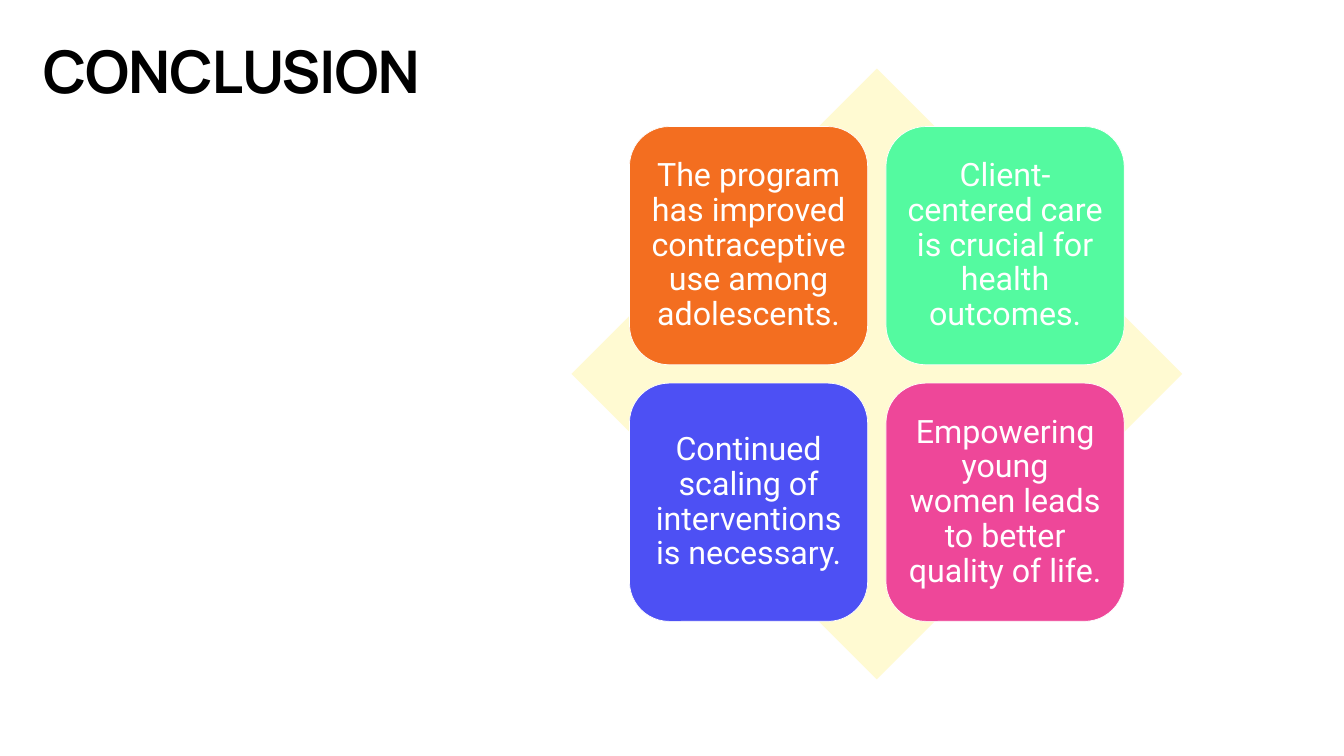
import pptx
import pptx.util
import pptx.dml.color
import pptx.enum.shapes
import pptx.enum.text

Inches, Pt = pptx.util.Inches, pptx.util.Pt
RGB = pptx.dml.color.RGBColor.from_string
SHAPE = pptx.enum.shapes.MSO_SHAPE
ALIGN = pptx.enum.text.PP_ALIGN
MIDDLE = pptx.enum.text.MSO_ANCHOR.MIDDLE

THEME = {
    "diamond": "FFFAD2",
    "outline": "FFFFFF",
    "heading": {"name": "Manrope", "size": Pt(84), "bold": True, "color": "000000"},
    "body": {"name": "Roboto", "size": Pt(46), "bold": False, "color": "FFFFFF"},
}

CONCLUSIONS = [
    ("The program has improved contraceptive use among adolescents.", "F36E20"),
    ("Client-centered care is crucial for health outcomes.", "54FAA0"),
    ("Continued scaling of interventions is necessary.", "4D50F4"),
    ("Empowering young women leads to better quality of life.", "EE4799"),
]


def write(frame, text, style, frame_format, paragraph_format):
    frame.text = text
    paragraph = frame.paragraphs[0]
    font = paragraph.runs[0].font
    for target, values in ((frame, frame_format), (paragraph, paragraph_format), (font, style)):
        for attribute, value in values.items():
            if attribute == "color":
                font.color.rgb = RGB(value)
            else:
                setattr(target, attribute, value)
    return paragraph.runs[0]


def add_filled(slide, preset, left, top, side, color):
    shape = slide.shapes.add_shape(preset, Inches(left), Inches(top), Inches(side), Inches(side))
    shape.shadow.inherit = False
    shape.fill.solid()
    shape.fill.fore_color.rgb = RGB(color)
    shape.line.fill.background()
    return shape


deck = pptx.Presentation()
deck.slide_width, deck.slide_height = Inches(26.67), Inches(15)
slide = deck.slides.add_slide(deck.slide_layouts[5])

# Heading
heading = slide.shapes.title
heading_box = {"left": 0.75, "top": 0.58, "width": 9.67, "height": 1.91}
for side, length in heading_box.items():
    setattr(heading, side, Inches(length))
heading_frame = {
    "margin_left": Inches(0.1), "margin_right": Inches(0.1),
    "margin_top": Inches(0.1), "margin_bottom": Inches(0.05),
    "vertical_anchor": MIDDLE, "word_wrap": True,
    "auto_size": pptx.enum.text.MSO_AUTO_SIZE.NONE,
}
heading_run = write(heading.text_frame, "CONCLUSION", THEME["heading"], heading_frame,
                    {"alignment": ALIGN.LEFT, "line_spacing": 0.7})
heading_run.font._element.set("spc", "-150")

# Diamond behind a two-by-two matrix, whose grid is a share of the diamond
diamond_left, diamond_top, diamond_side = 11.34, 1.36, 12.12
add_filled(slide, SHAPE.DIAMOND, diamond_left, diamond_top, diamond_side, THEME["diamond"])

tile_side = 0.39 * diamond_side
tile_pitch = 0.42 * diamond_side
tile_inset = (diamond_side - tile_pitch - tile_side) / 2
tile_frame = {f"margin_{side}": Inches(0.19) for side in ("left", "right", "top", "bottom")}
tile_frame |= {"vertical_anchor": MIDDLE, "word_wrap": True}

for index, (conclusion, color) in enumerate(CONCLUSIONS):
    row, column = divmod(index, 2)
    tile = add_filled(slide, SHAPE.ROUNDED_RECTANGLE,
                      diamond_left + tile_inset + column * tile_pitch,
                      diamond_top + tile_inset + row * tile_pitch, tile_side, color)
    tile.line.color.rgb = RGB(THEME["outline"])
    tile.line.width = Pt(1)
    write(tile.text_frame, conclusion, THEME["body"], tile_frame,
          {"alignment": ALIGN.CENTER, "line_spacing": 0.9})

deck.save("out.pptx")
